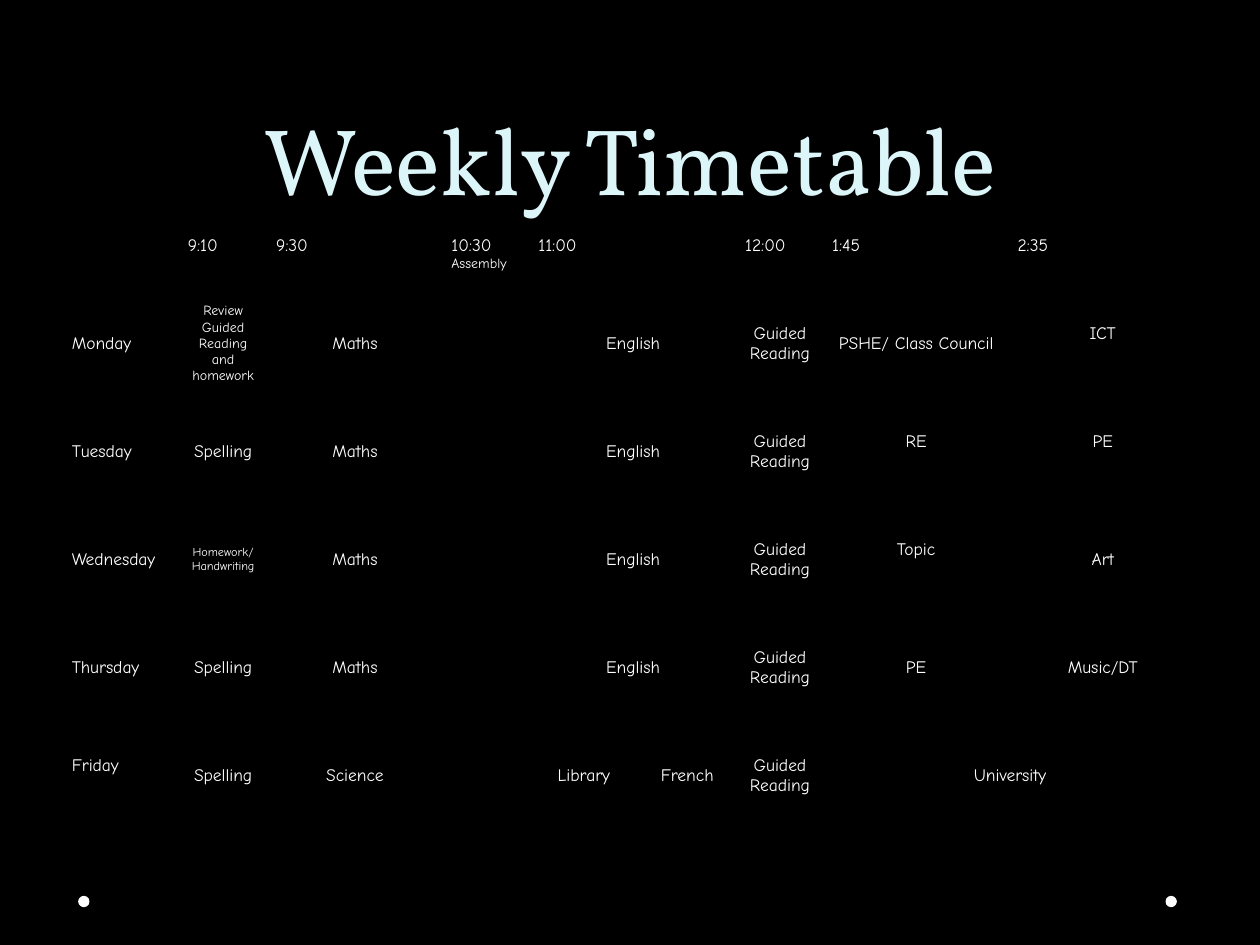
from lxml import etree
from pptx import Presentation, util as u
from pptx.dml.color import RGBColor
from pptx.enum import shapes, text
from pptx.oxml.ns import qn

BLACK = RGBColor(0x00, 0x00, 0x00)
WHITE = RGBColor(0xFF, 0xFF, 0xFF)
PALE_BLUE = RGBColor(0xDB, 0xF5, 0xF9)
WIDTH, HEIGHT = u.Inches(10), u.Inches(7.5)

COLUMNS = [0.92, 0.7, 1.39, 0.69, 0.86, 0.78, 0.69, 1.47, 1.49]
ROWS = [1] + [2] * 5
TIMES = ["", "9:10", "9:30", "10:30\nAssembly", "11:00", "", "12:00", "1:45", "2:35"]
READING = "Guided\nReading"
DAYS = [
    ["Monday", "Review Guided Reading and homework", "Maths", "", "English", "",
     READING, "PSHE/ Class Council", "ICT"],
    ["Tuesday", "Spelling", "Maths", "", "English", "", READING, "RE", "PE"],
    ["Wednesday", "Homework/\nHandwriting", "Maths", "", "English", "",
     READING, "Topic", "Art"],
    ["Thursday", "Spelling", "Maths", "", "English", "", READING, "PE", "Music/DT"],
    ["Friday", "Spelling", "Science", "", "Library", "French",
     READING, "University", ""],
]
MERGED = [(row, 4) for row in range(5)] + [(5, 7)]
RAISED = {(1, 8), (2, 7), (2, 8), (3, 7), (5, 0)}
SMALL = {"Assembly": 8, "Review Guided Reading and homework": 8,
         "Homework/": 7, "Handwriting": 7}


def write(frame, words, size=10, font="Comic Neue", color=WHITE,
          align=text.PP_ALIGN.CENTER, spacing=None):
    """Fill a text frame with one formatted paragraph per line."""
    frame.text = words
    for paragraph in frame.paragraphs:
        paragraph.alignment = align
        paragraph.line_spacing = spacing
        paragraph.font.size = u.Pt(size)
        for run in paragraph.runs:
            run.font.size = u.Pt(SMALL.get(run.text, size))
            run.font.name = font
            run.font.color.rgb = color


def outline(cell, color=BLACK, width=1):
    """Draw a solid border on all four sides of a cell."""
    properties = cell._tc.get_or_add_tcPr()
    for side in ("a:lnL", "a:lnR", "a:lnT", "a:lnB"):
        line = etree.SubElement(properties, qn(side), w=str(u.Pt(width)))
        fill = etree.SubElement(line, qn("a:solidFill"))
        etree.SubElement(fill, qn("a:srgbClr"), val=str(color))


def add_title(slide, left, top, width, height):
    """Place the heading in the title placeholder."""
    title = slide.shapes.title
    title.left, title.top, title.width, title.height = left, top, width, height
    title.text_frame.vertical_anchor = text.MSO_ANCHOR.BOTTOM
    write(title.text_frame, "Weekly Timetable", size=54, font="Vollkorn",
          color=PALE_BLUE, spacing=u.Pt(58))


def add_timetable(slide, left, top, width, height):
    """Place the week's lessons in a table with a row for each day."""
    timetable = slide.shapes.add_table(
        len(ROWS), len(COLUMNS), left, top, width, height).table
    timetable.first_row = timetable.horz_banding = False
    for column, share in zip(timetable.columns, COLUMNS):
        column.width = int(width * share / sum(COLUMNS))
    for row, share in zip(timetable.rows, ROWS):
        row.height = int(height * share / sum(ROWS))
    for r, lessons in enumerate([TIMES] + DAYS):
        for c, lesson in enumerate(lessons):
            cell = timetable.cell(r, c)
            outline(cell)
            cell.fill.background()
            cell.margin_left = cell.margin_right = u.Inches(0.07)
            cell.margin_top = 0
            cell.margin_bottom = u.Inches(0.16 if (r, c) in RAISED else 0)
            cell.vertical_anchor = text.MSO_ANCHOR.MIDDLE if r else text.MSO_ANCHOR.TOP
            centred = r and c
            write(cell.text_frame, lesson,
                  align=text.PP_ALIGN.CENTER if centred else text.PP_ALIGN.LEFT)
    for r, c in MERGED:
        timetable.cell(r, c).merge(timetable.cell(r, c + 1))


def add_footer_dots(slide, left, top, width, size):
    """Place a white dot at each end of the footer."""
    for x in (left, left + width - size):
        dot = slide.shapes.add_shape(shapes.MSO_SHAPE.OVAL, x, top, size, size)
        dot.shadow.inherit = False
        dot.fill.solid()
        dot.fill.fore_color.rgb = WHITE
        dot.line.fill.background()


def main():
    """Build the timetable slide and save it."""
    deck = Presentation()
    deck.slide_width, deck.slide_height = WIDTH, HEIGHT
    slide = deck.slides.add_slide(deck.slide_layouts[5])
    slide.background.fill.solid()
    slide.background.fill.fore_color.rgb = BLACK
    margin, content = int(WIDTH * 0.05), int(WIDTH * 0.9)
    add_footer_dots(slide, u.Inches(0.62), u.Inches(7.11), u.Inches(8.72), u.Inches(0.09))
    add_title(slide, margin, 0, content, u.Inches(1.75))
    add_timetable(slide, margin, u.Inches(1.87), content, u.Inches(4.72))
    deck.save("out.pptx")


if __name__ == "__main__":
    main()
